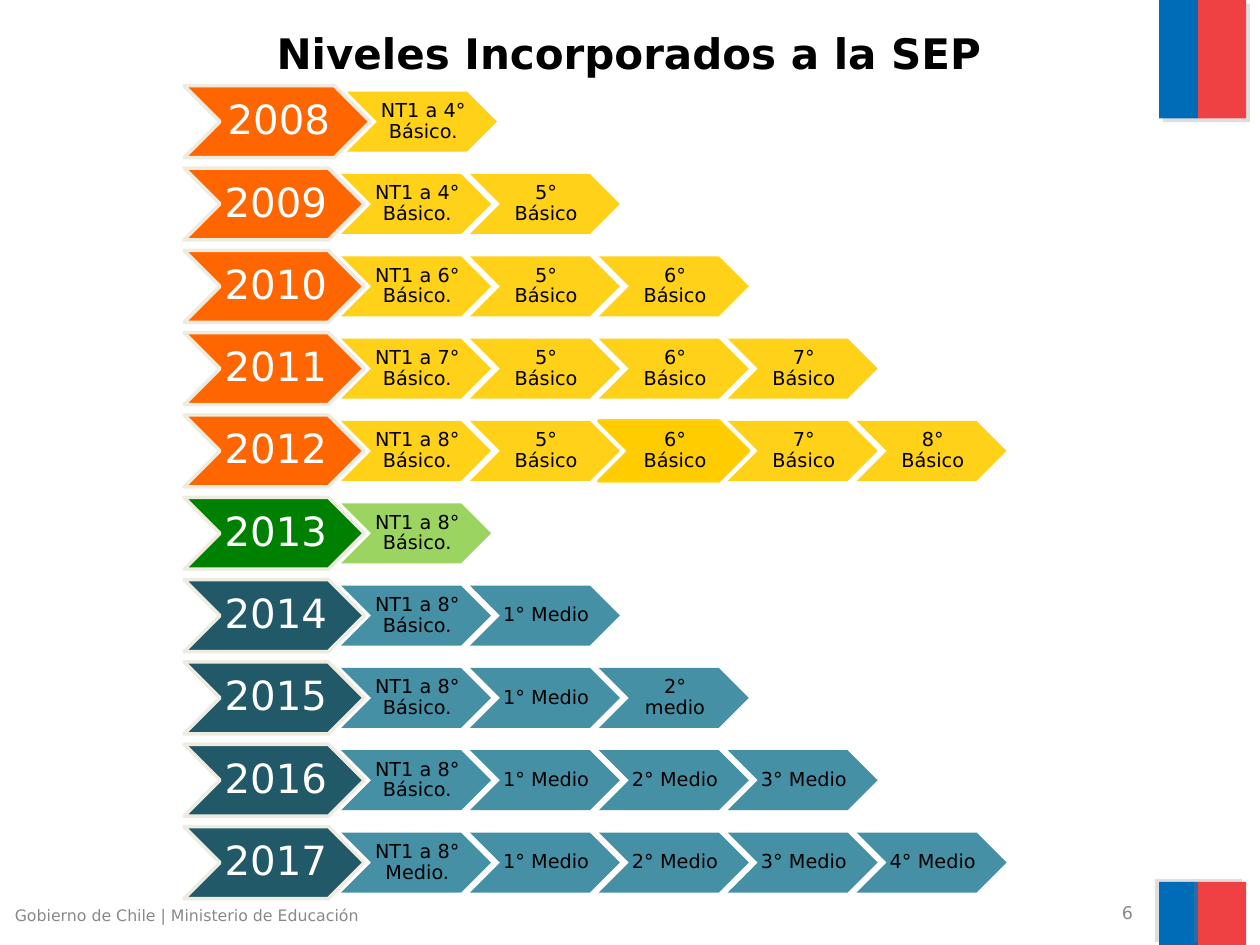
"""Builds the slide of school levels that joined the SEP in each year."""
from lxml import etree
from pptx import Presentation
from pptx.dml.color import RGBColor
from pptx.enum import shapes, text
from pptx.oxml.ns import qn
from pptx.util import Pt

TITLE = "Niveles Incorporados a la SEP"
FOOTER = "Gobierno de Chile | Ministerio de Educación"
PAGE = "6"
YEARS = [
    ("2008", "basic", ["NT1 a 4° Básico."]),
    ("2009", "basic", ["NT1 a 4° Básico.", "5° Básico"]),
    ("2010", "basic", ["NT1 a 6° Básico.", "5° Básico", "6° Básico"]),
    ("2011", "basic", ["NT1 a 7° Básico.", "5° Básico", "6° Básico", "7° Básico"]),
    ("2012", "basic", ["NT1 a 8° Básico.", "5° Básico", "6° Básico", "7° Básico", "8° Básico"]),
    ("2013", "complete", ["NT1 a 8° Básico."]),
    ("2014", "middle", ["NT1 a 8° Básico.", "1° Medio"]),
    ("2015", "middle", ["NT1 a 8° Básico.", "1° Medio", "2° medio"]),
    ("2016", "middle", ["NT1 a 8° Básico.", "1° Medio", "2° Medio", "3° Medio"]),
    ("2017", "middle", ["NT1 a 8° Medio.", "1° Medio", "2° Medio", "3° Medio", "4° Medio"]),
]
HIGHLIGHT = ("2012", "6° Básico")

THEME = {
    "font": "DejaVu Sans",
    "title": 24, "year": 23, "level": 11, "page": 10, "footer": 9,
    "black": "000000", "white": "FFFFFF", "grey": "898989",
    "outline": "EEECE1", "shade": "808080",
    "blue": "006CB7", "red": "EF4144",
    "basic": ("FF6600", "FFCC00"),
    "complete": ("008000", "92D050"),
    "middle": ("215968", "31859C"),
}

ROW_TOP, ROW_PITCH = 49, 47.04
YEAR_LEFT, YEAR_WIDTH, YEAR_HEIGHT = 105.2, 103, 41.1
LEVEL_LEFT, LEVEL_PITCH, LEVEL_WIDTH, LEVEL_HEIGHT = 194.9, 73.65, 85.7, 34.3
FIRST_YEAR_EXTRA = 3.4
FLAG_LEFT = 662.4
FLAG_STRIPES = [("blue", 0, 22.3), ("red", 22.3, 27.4)]
FLAG_BANDS = [(0, 67.7, 45), (504, 36, 215)]


def write(holder, words, size, color, bold=False, align=text.PP_ALIGN.CENTER,
          anchor=text.MSO_ANCHOR.MIDDLE, insets=(7.2, 3.6, 7.2, 3.6), spacing=1):
    frame = holder.text_frame
    frame.word_wrap = True
    frame.auto_size = text.MSO_AUTO_SIZE.NONE
    frame.vertical_anchor = anchor
    frame.margin_left, frame.margin_top, frame.margin_right, frame.margin_bottom = map(Pt, insets)
    paragraph = frame.paragraphs[0]
    paragraph.alignment = align
    paragraph.line_spacing = spacing
    run = paragraph.add_run()
    run.text = words
    run.font.name = THEME["font"]
    run.font.size = Pt(THEME[size])
    run.font.bold = bold
    run.font.color.rgb = RGBColor.from_string(THEME[color])


def block(slide, preset, box, fill, outline=None):
    piece = slide.shapes.add_shape(preset, *map(Pt, box))
    piece.shadow.inherit = False
    piece.fill.solid()
    piece.fill.fore_color.rgb = RGBColor.from_string(fill)
    if outline:
        piece.line.color.rgb = RGBColor.from_string(outline)
        piece.line.width = Pt(2)
    else:
        piece.line.fill.background()
    return piece


def set_alpha(color, percent):
    etree.SubElement(color, qn("a:alpha"), val=str(percent * 1000))


def cast_shadow(piece, angle):
    effects = piece.element.spPr.find(qn("a:effectLst"))
    shadow = etree.SubElement(effects, qn("a:outerShdw"), blurRad="0", dist=str(Pt(3)),
                              dir=str(angle * 60000), algn="ctr", rotWithShape="0")
    set_alpha(etree.SubElement(shadow, qn("a:srgbClr"), val=THEME["shade"]), 25)


def add_flags(slide):
    for top, height, angle in FLAG_BANDS:
        for color, offset, width in FLAG_STRIPES:
            stripe = block(slide, shapes.MSO_SHAPE.RECTANGLE,
                           (FLAG_LEFT + offset, top, width, height), THEME[color])
            cast_shadow(stripe, angle)


def add_year(slide, row, year, stage, levels):
    year_fill, level_fill = THEME[stage]
    top = ROW_TOP + row * ROW_PITCH
    extra = FIRST_YEAR_EXTRA if row == 0 else 0
    chevron = shapes.MSO_SHAPE.CHEVRON
    heading = block(slide, chevron, (YEAR_LEFT, top, YEAR_WIDTH + extra, YEAR_HEIGHT),
                    year_fill, THEME["outline"])
    write(heading, year, "year", "white", insets=(2, 1.4, 0, 1.4), spacing=0.9)
    level_top = top + (YEAR_HEIGHT - LEVEL_HEIGHT) / 2
    for column, level in enumerate(levels):
        marked = (year, level) == HIGHLIGHT
        left = LEVEL_LEFT + extra + column * LEVEL_PITCH
        step = block(slide, chevron, (left, level_top, LEVEL_WIDTH, LEVEL_HEIGHT),
                     level_fill, level_fill if marked else None)
        part = "a:ln" if marked else "a:solidFill"
        set_alpha(next(step.element.spPr.find(qn(part)).iter(qn("a:srgbClr"))), 90)
        write(step, level, "level", "black", insets=(1.4, 0.7, 0, 0.7), spacing=0.9)


def main():
    deck = Presentation()
    deck.slide_width, deck.slide_height = Pt(720), Pt(540)
    slide = deck.slides.add_slide(deck.slide_layouts[5])
    add_flags(slide)

    page = slide.shapes.add_textbox(Pt(486.7), Pt(514.1), Pt(167.8), Pt(15.1))
    write(page, PAGE, "page", "grey", align=text.PP_ALIGN.RIGHT)
    footer = slide.shapes.add_textbox(Pt(1.4), Pt(514.1), Pt(228.2), Pt(19.4))
    write(footer, FOOTER, "footer", "grey", align=text.PP_ALIGN.LEFT, anchor=text.MSO_ANCHOR.TOP)

    title = slide.shapes.title
    title.left, title.top, title.width, title.height = map(Pt, (0, 0, 718.6, 60.5))
    write(title, TITLE, "title", "black", bold=True)

    for row, (year, stage, levels) in enumerate(YEARS):
        add_year(slide, row, year, stage, levels)
    deck.save("out.pptx")


if __name__ == "__main__":
    main()
